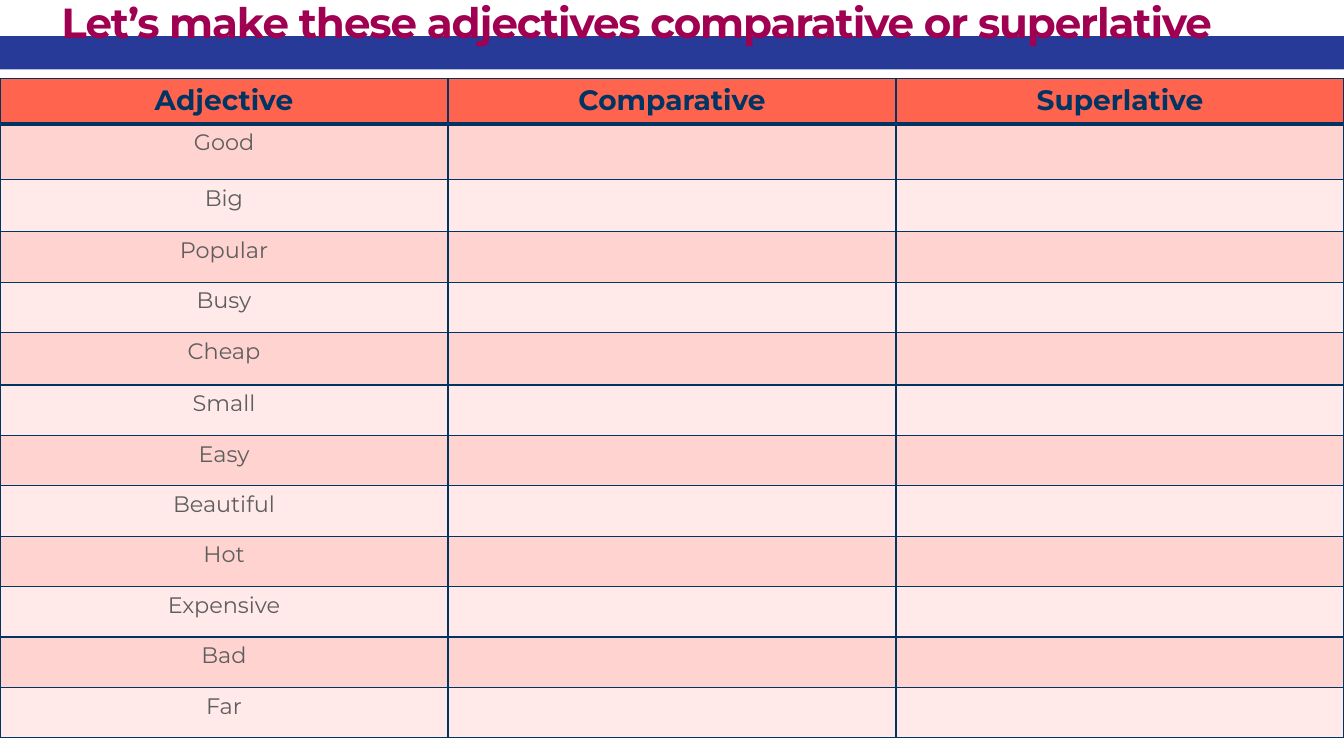
import pptx
import pptx.dml.color
import pptx.enum.shapes
import pptx.enum.text
import pptx.oxml
import pptx.oxml.ns
import pptx.util

Inches = pptx.util.Inches
Pt = pptx.util.Pt

NAVY = "003462"
BAR_BLUE = "283A97"
HEADER_FILL = "FF644E"
BAND_FILLS = ("FFD3D0", "FFEAE9")
HEADER_FONT = {"name": "Montserrat", "size": Pt(20), "bold": True, "color": NAVY}
BODY_FONT = {"name": "Montserrat", "size": Pt(16), "bold": False, "color": "5E5E5E"}
TITLE_FONT = {"name": "Montserrat", "size": Pt(30), "bold": True, "color": "A00051"}

HEADINGS = ("Adjective", "Comparative", "Superlative")
ADJECTIVES = ("Good", "Big", "Popular", "Busy", "Cheap", "Small", "Easy",
              "Beautiful", "Hot", "Expensive", "Bad", "Far")
HEADER_HEIGHT = 0.45
ROW_HEIGHT = 0.5
TALL_ROWS = {"Good": 0.55, "Big": 0.52, "Cheap": 0.52}


def rgb(value):
    return pptx.dml.color.RGBColor.from_string(value)


def format_font(font, values):
    for name, value in values.items():
        if name == "color":
            font.color.rgb = rgb(value)
        else:
            setattr(font, name, value)


def add_bar(page, left, top, width, height):
    """Draw the blue band behind the title."""
    bar = page.shapes.add_shape(pptx.enum.shapes.MSO_SHAPE.RECTANGLE,
                                left, top, width, height)
    bar.shadow.inherit = False
    bar.fill.solid()
    bar.fill.fore_color.rgb = rgb(BAR_BLUE)
    bar.line.fill.background()
    page.shapes.title._element.addprevious(bar._element)


def place_title(page, text, left, top, width, height):
    title = page.shapes.title
    box = {"left": left, "top": top, "width": width, "height": height}
    for name, value in box.items():
        setattr(title, name, value)
    frame = title.text_frame
    inset = Inches(0.06)
    settings = {"margin_left": inset, "margin_top": inset, "margin_right": inset,
                "margin_bottom": inset, "word_wrap": True,
                "auto_size": pptx.enum.text.MSO_AUTO_SIZE.NONE,
                "vertical_anchor": pptx.enum.text.MSO_ANCHOR.TOP}
    for name, value in settings.items():
        setattr(frame, name, value)
    para = frame.paragraphs[0]
    para.alignment = pptx.enum.text.PP_ALIGN.LEFT
    para.line_spacing = 0.8
    span = para.add_run()
    span.text = text
    format_font(span.font, TITLE_FONT)
    span._r.get_or_add_rPr().set("spc", "-80")


def set_borders(cell, widths):
    """Add navy borders; widths maps L, R, T and B, in that order, to points."""
    properties = cell._tc.get_or_add_tcPr()
    for side, width in widths.items():
        properties.append(pptx.oxml.parse_xml(
            f'<a:ln{side} {pptx.oxml.ns.nsdecls("a")} w="{Pt(width)}">'
            f'<a:solidFill><a:srgbClr val="{NAVY}"/></a:solidFill></a:ln{side}>'))


def fill_cell(cell, text, font_values, fill, top_border, bottom_border):
    set_borders(cell, {"L": 1, "R": 1, "T": top_border, "B": bottom_border})
    cell.fill.solid()
    cell.fill.fore_color.rgb = rgb(fill)
    cell.margin_left = cell.margin_right = Inches(0.05)
    cell.margin_top = cell.margin_bottom = Inches(0.05)
    para = cell.text_frame.paragraphs[0]
    para.alignment = pptx.enum.text.PP_ALIGN.CENTER
    if text:
        span = para.add_run()
        span.text = text
        format_font(span.font, font_values)
    else:
        format_font(para.font, font_values)


def add_adjective_table(page, left, top, width):
    heights = [HEADER_HEIGHT] + [TALL_ROWS.get(word, ROW_HEIGHT) for word in ADJECTIVES]
    table = page.shapes.add_table(len(heights), len(HEADINGS), left, top, width,
                                  Inches(sum(heights))).table
    for row, height in zip(table.rows, heights):
        row.height = Inches(height)
    for column, heading in enumerate(HEADINGS):
        fill_cell(table.cell(0, column), heading, HEADER_FONT, HEADER_FILL, 1, 3)
        for index, word in enumerate(ADJECTIVES):
            text = word if column == 0 else ""
            top_border = 3 if index == 0 else 1
            fill_cell(table.cell(index + 1, column), text, BODY_FONT,
                      BAND_FILLS[index % 2], top_border, 1)


def main():
    deck = pptx.Presentation()
    deck.slide_width = Inches(13.33)
    deck.slide_height = Inches(7.5)
    page = deck.slides.add_slide(deck.slide_layouts.get_by_name("Title Only"))
    add_bar(page, 0, Inches(0.36), deck.slide_width, Inches(0.33))
    place_title(page, "Let’s make these adjectives comparative or superlative",
                Inches(0.55), 0, Inches(12.01), Inches(0.78))
    add_adjective_table(page, 0, Inches(0.78), deck.slide_width)
    deck.save("out.pptx")


if __name__ == "__main__":
    main()
